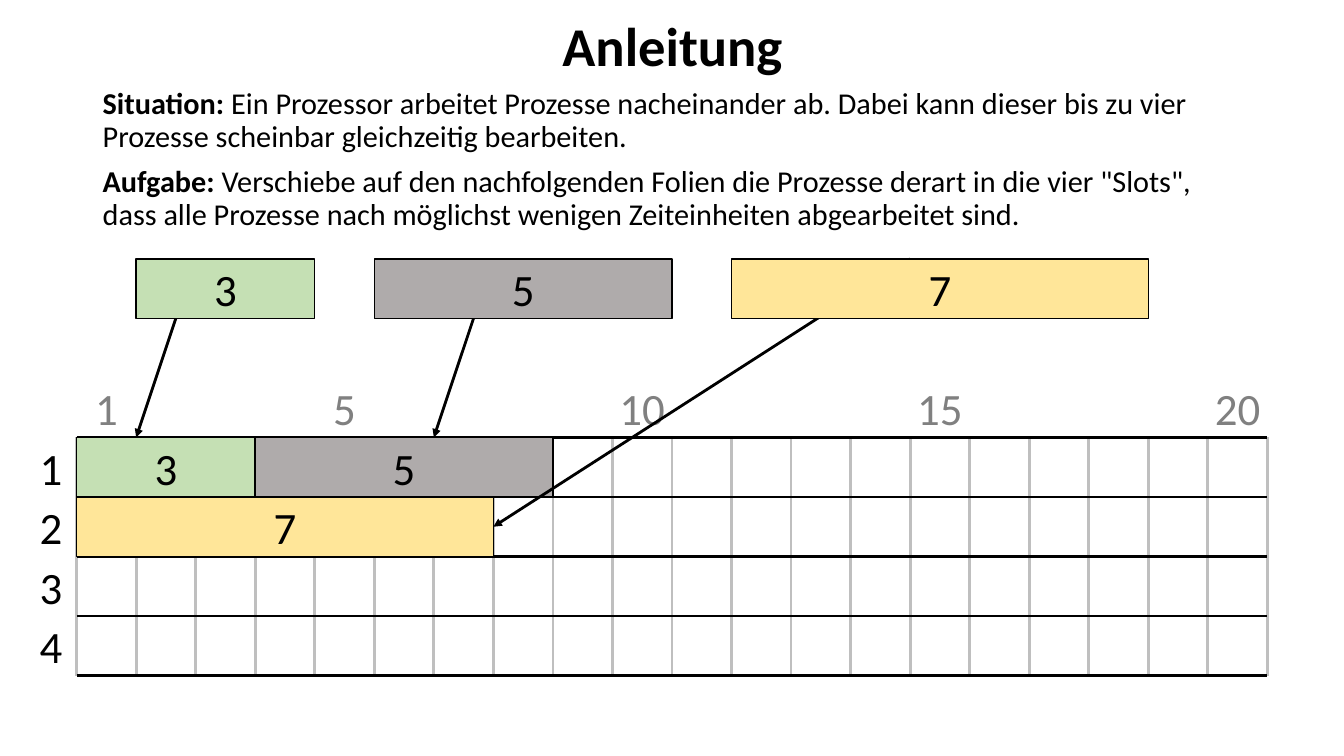
from typing import NamedTuple

from lxml.etree import SubElement
from pptx import Presentation
from pptx.dml.color import RGBColor
from pptx.enum.shapes import MSO_CONNECTOR, MSO_SHAPE
from pptx.enum.text import MSO_ANCHOR, PP_ALIGN
from pptx.oxml.ns import qn
from pptx.slide import Slide
from pptx.text.text import TextFrame, _Paragraph
from pptx.util import Inches, Pt

BLACK = RGBColor(0x00, 0x00, 0x00)
GRAY = RGBColor(0x80, 0x80, 0x80)
LIGHT_GRAY = RGBColor(0xBF, 0xBF, 0xBF)
GREEN = RGBColor(0xC5, 0xE0, 0xB4)
STONE = RGBColor(0xAF, 0xAB, 0xAB)
YELLOW = RGBColor(0xFF, 0xE6, 0x99)

FONT = "Calibri"
TIME_UNITS = 20
SLOTS = 4
GRID_LEFT, GRID_TOP, GRID_WIDTH = 0.76, 4.34, 11.81
CELL = GRID_WIDTH / TIME_UNITS
WAITING_ROW = -3


class Point(NamedTuple):
    """A place on the grid, in cells from its top left corner."""
    column: float
    row: float


class Process(NamedTuple):
    duration: int
    color: RGBColor
    waiting_column: int
    slot: Point
    arrow_start: Point
    arrow_end: Point


PROCESSES = [
    Process(3, GREEN, 1, Point(0, 0), Point(2, WAITING_ROW), Point(1, 0)),
    Process(5, STONE, 5, Point(3, 0), Point(7, WAITING_ROW), Point(6, 0)),
    Process(7, YELLOW, 11, Point(0, 1), Point(14, WAITING_ROW), Point(7, 1.5)),
]

INSTRUCTIONS = [
    ("Situation:", " Ein Prozessor arbeitet Prozesse nacheinander ab. Dabei kann dieser "
     "bis zu vier Prozesse scheinbar gleichzeitig bearbeiten."),
    ("Aufgabe:", " Verschiebe auf den nachfolgenden Folien die Prozesse derart in die vier "
     "\"Slots\", dass alle Prozesse nach möglichst wenigen Zeiteinheiten abgearbeitet sind."),
]


def grid_x(column: float) -> int:
    return Inches(GRID_LEFT + column * CELL)


def grid_y(row: float) -> int:
    return Inches(GRID_TOP + row * CELL)


def add_text(paragraph: _Paragraph, text: str, *, size: float = 32,
             color: RGBColor = BLACK, bold: bool = False,
             align: PP_ALIGN = PP_ALIGN.CENTER) -> None:
    paragraph.alignment = align
    run = paragraph.add_run()
    run.text = text
    run.font.name = FONT
    run.font.size = Pt(size)
    run.font.bold = bold
    run.font.color.rgb = color


def add_line(slide: Slide, start: Point, end: Point, color: RGBColor = BLACK,
             arrow: bool = False) -> None:
    connector = slide.shapes.add_connector(
        MSO_CONNECTOR.STRAIGHT, grid_x(start.column), grid_y(start.row),
        grid_x(end.column), grid_y(end.row))
    connector.line.color.rgb = color
    connector.line.width = Pt(2)
    if arrow:
        SubElement(connector.line._get_or_add_ln(), qn("a:tailEnd"), type="triangle")
    SubElement(connector._element.spPr, qn("a:effectLst"))


def add_label(slide: Slide, text: str, left: int, row: int, cells: int,
              color: RGBColor) -> None:
    label = slide.shapes.add_textbox(left, grid_y(row), Inches(cells * CELL), Inches(CELL))
    frame = label.text_frame
    frame.margin_left = frame.margin_right = frame.margin_top = frame.margin_bottom = 0
    frame.word_wrap = True
    frame.vertical_anchor = MSO_ANCHOR.MIDDLE
    add_text(frame.paragraphs[0], text, color=color)


def add_process_box(slide: Slide, process: Process, place: Point) -> None:
    box = slide.shapes.add_shape(
        MSO_SHAPE.RECTANGLE, grid_x(place.column), grid_y(place.row),
        Inches(process.duration * CELL), Inches(CELL))
    box.shadow.inherit = False
    box.fill.solid()
    box.fill.fore_color.rgb = process.color
    box.line.color.rgb = BLACK
    box.line.width = Pt(1)
    box.text_frame.vertical_anchor = MSO_ANCHOR.MIDDLE
    add_text(box.text_frame.paragraphs[0], str(process.duration))


def add_grid(slide: Slide) -> None:
    for column in range(TIME_UNITS + 1):
        add_line(slide, Point(column, SLOTS), Point(column, 0), LIGHT_GRAY)
    for row in range(SLOTS + 1):
        add_line(slide, Point(0, row), Point(TIME_UNITS, row))
    for row in range(SLOTS):
        add_label(slide, str(row + 1), Inches(0.21), row, 1, BLACK)
    for time in (1, 5, 10, 15, 20):
        add_label(slide, str(time), grid_x(time - 2), -1, 3, GRAY)


def add_title(slide: Slide) -> None:
    title = slide.shapes.title
    title.left, title.top = Inches(0.92), Inches(0.18)
    title.width, title.height = Inches(11.5), Inches(0.65)
    title.text_frame.vertical_anchor = MSO_ANCHOR.MIDDLE
    paragraph = title.text_frame.paragraphs[0]
    paragraph.line_spacing = 0.8
    add_text(paragraph, "Anleitung", size=39, bold=True)


def add_instructions(slide: Slide) -> None:
    box = slide.shapes.add_textbox(Inches(0.92), Inches(0.83), Inches(11.5), Inches(1.48))
    frame: TextFrame = box.text_frame
    frame.word_wrap = True
    for index, (heading, text) in enumerate(INSTRUCTIONS):
        paragraph = frame.add_paragraph() if index else frame.paragraphs[0]
        paragraph.line_spacing = 0.9
        paragraph.space_after = Pt(9)
        add_text(paragraph, heading, size=21.6, bold=True, align=PP_ALIGN.LEFT)
        add_text(paragraph, text, size=21.6, align=PP_ALIGN.LEFT)


def main() -> None:
    presentation = Presentation()
    presentation.slide_width = Inches(13.33)
    presentation.slide_height = Inches(7.5)
    slide = presentation.slides.add_slide(presentation.slide_layouts.get_by_name("Title Only"))
    add_title(slide)
    add_instructions(slide)
    add_grid(slide)
    for process in PROCESSES:
        add_process_box(slide, process, process.slot)
    for process in PROCESSES:
        add_line(slide, process.arrow_start, process.arrow_end, arrow=True)
    for process in PROCESSES:
        add_process_box(slide, process, Point(process.waiting_column, WAITING_ROW))
    presentation.save("out.pptx")


if __name__ == "__main__":
    main()
